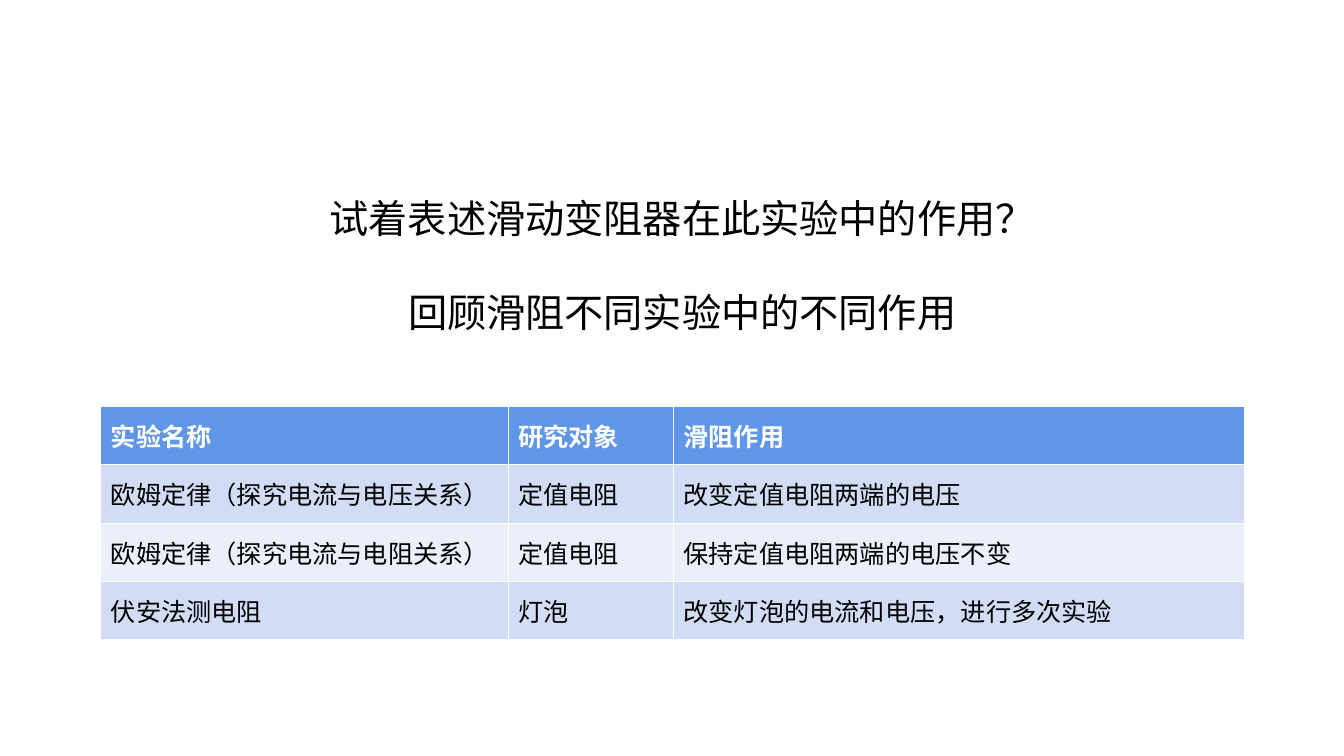
from lxml import etree
from pptx import Presentation, util as u
from pptx.dml.color import RGBColor
from pptx.enum import text
from pptx.oxml import ns

CJK = "Noto Sans CJK SC"
QUESTIONS = ["试着表述滑动变阻器在此实验中的作用？", "回顾滑阻不同实验中的不同作用"]
ROWS = [
    ["实验名称", "研究对象", "滑阻作用"],
    ["欧姆定律（探究电流与电压关系）", "定值电阻", "改变定值电阻两端的电压"],
    ["欧姆定律（探究电流与电阻关系）", "定值电阻", "保持定值电阻两端的电压不变"],
    ["伏安法测电阻", "灯泡", "改变灯泡的电流和电压，进行多次实验"],
]
COLUMN_WIDTHS = [4.04, 1.64, 5.66]
HEADER, BANDS = "6096E6", ["D2DDF5", "EAEFFA"]


def colour(value):
    return RGBColor.from_string(value)


def set_font(p, name, size, value, bold=False):
    f = p.font
    f.name, f.size, f.bold = name, u.Pt(size), bold
    f.color.rgb = colour(value)
    # East Asian characters take their own typeface
    props = p._p.pPr.find(ns.qn("a:defRPr"))
    etree.SubElement(props, ns.qn("a:ea"), typeface=CJK)


def add_questions(s, left, top, width, height):
    tf = s.shapes.add_textbox(*map(u.Inches, (left, top, width, height))).text_frame
    tf.word_wrap = True
    for i, question in enumerate(QUESTIONS):
        p = tf.paragraphs[0] if i == 0 else tf.add_paragraph()
        p.text = question
        p.alignment = text.PP_ALIGN.CENTER
        p.line_spacing = 2.0
        set_font(p, CJK, 28, "000000")


def add_experiments(s, left, top, width, height):
    box = map(u.Inches, (left, top, width, height))
    table = s.shapes.add_table(len(ROWS), len(COLUMN_WIDTHS), *box).table
    for column, share in zip(table.columns, COLUMN_WIDTHS):
        column.width = u.Inches(width * share / sum(COLUMN_WIDTHS))
    for r, row in enumerate(ROWS):
        header = r == 0
        for c, words in enumerate(row):
            cell = table.cell(r, c)
            cell.text = words
            cell.vertical_anchor = text.MSO_ANCHOR.MIDDLE
            cell.fill.solid()
            cell.fill.fore_color.rgb = colour(HEADER if header else BANDS[(r - 1) % 2])
            set_font(cell.text_frame.paragraphs[0], "Arial", 18,
                     "FFFFFF" if header else "000000", header)


def main():
    prs = Presentation()
    prs.slide_width, prs.slide_height = u.Inches(13.33), u.Inches(7.5)
    s = prs.slides.add_slide(prs.slide_layouts[6])
    # Questions above, comparison table below
    add_questions(s, 1.34, 1.41, 10.85, 1.98)
    add_experiments(s, 1, 4.03, 11.34, 2.32)
    prs.save("out.pptx")


if __name__ == "__main__":
    main()
